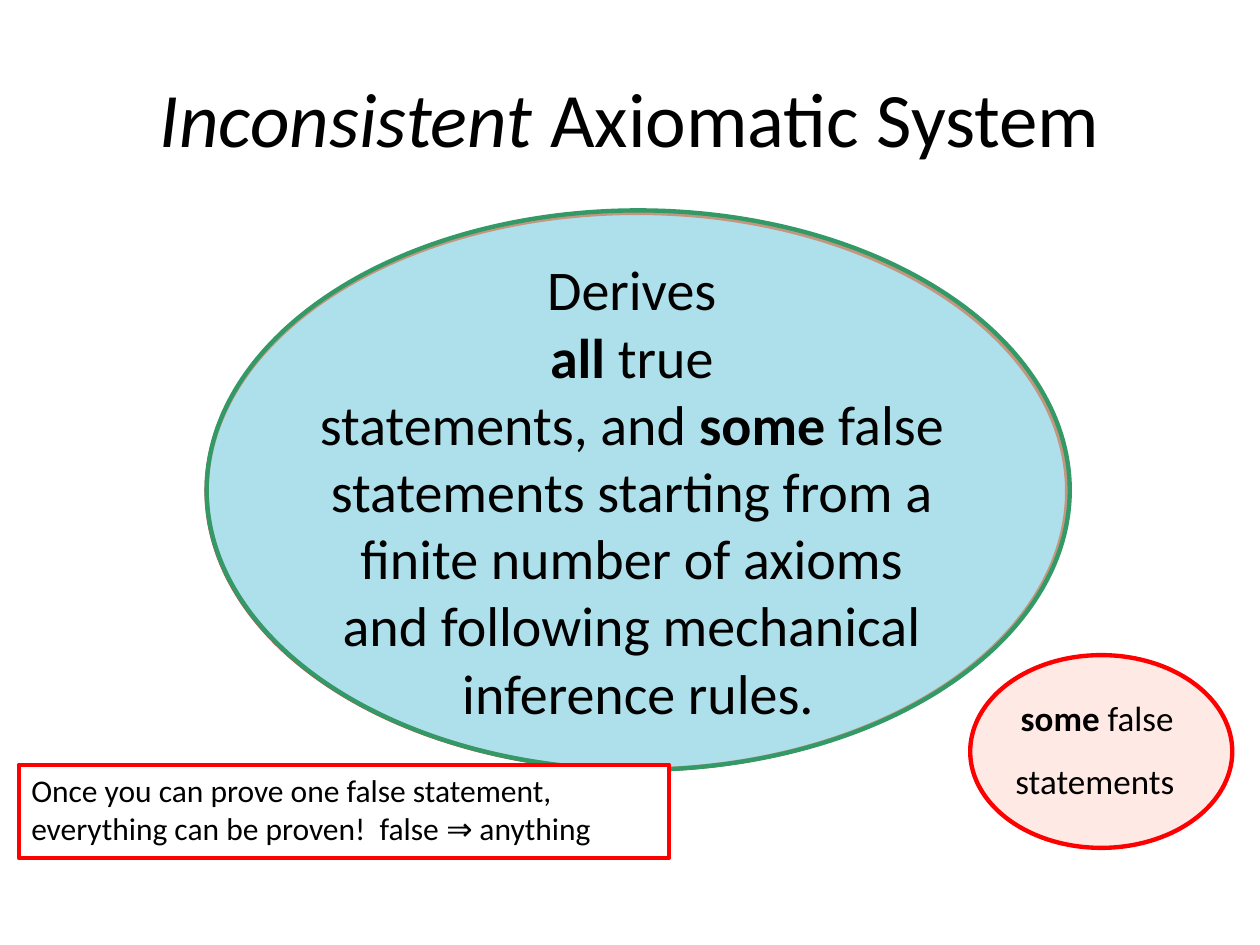
"""Build the slide on inconsistent axiomatic systems."""
from dataclasses import dataclass
from typing import Optional

import lxml.etree
import pptx
import pptx.dml.color
import pptx.enum.shapes
import pptx.enum.text
import pptx.oxml.ns
import pptx.util

W, H = 10, 7.5
FONT = "Calibri"
COLORS = {
    "text": "000000", "white": "FFFFFF", "blue": "99CCFF", "brick": "C0504D",
    "mint": "CCFFCC", "green": "339966", "pink": "FFCABD", "red": "FF0000",
}
SHAPES = pptx.enum.shapes.MSO_SHAPE
ALIGN = pptx.enum.text.PP_ALIGN
ANCHOR = pptx.enum.text.MSO_ANCHOR


@dataclass
class Run:
    text: str
    bold: bool = False
    italic: bool = False
    size: Optional[int] = None


@dataclass
class Panel:
    box: tuple[float, float, float, float]
    fill: str
    line: str
    kind: SHAPES = SHAPES.OVAL
    alpha: Optional[int] = None
    size: int = 18
    align: ALIGN = ALIGN.CENTER
    anchor: ANCHOR = ANCHOR.MIDDLE
    lines: tuple[tuple[Run, ...], ...] = ()


def rgb(name: str) -> pptx.dml.color.RGBColor:
    return pptx.dml.color.RGBColor.from_string(COLORS[name])


def place(box: tuple[float, float, float, float]) -> list[int]:
    return [pptx.util.Inches(share * side) for share, side in zip(box, (W, H, W, H))]


def write(tf, lines, size: int, align: ALIGN, anchor: ANCHOR) -> None:
    tf.vertical_anchor = anchor
    for i, runs in enumerate(lines):
        p = tf.add_paragraph() if i else tf.paragraphs[0]
        p.alignment = align
        for run in runs:
            r = p.add_run()
            r.text = run.text
            r.font.name, r.font.size = FONT, pptx.util.Pt(run.size or size)
            r.font.bold, r.font.italic = run.bold, run.italic
            r.font.color.rgb = rgb("text")


def draw(slide, panel: Panel) -> None:
    sp = slide.shapes.add_shape(panel.kind, *place(panel.box))
    sp.shadow.inherit = False
    sp.fill.solid()
    sp.fill.fore_color.rgb = rgb(panel.fill)
    if panel.alpha is not None:
        color = sp.fill._xPr.find(".//" + pptx.oxml.ns.qn("a:srgbClr"))
        alpha = lxml.etree.SubElement(color, pptx.oxml.ns.qn("a:alpha"))
        alpha.set("val", str(panel.alpha * 1000))
    sp.line.color.rgb = rgb(panel.line)
    sp.line.width = pptx.util.Pt(2.5)
    if panel.lines:
        sp.text_frame.word_wrap = False
        write(sp.text_frame, panel.lines, panel.size, panel.align, panel.anchor)


PANELS = (
    Panel((0.164, 0.2253, 0.683, 0.5893), "blue", "brick"),
    Panel((0.164, 0.2227, 0.685, 0.592), "mint", "green", alpha=40, size=32, lines=(
        (Run("Derives "),),
        (Run("all", bold=True), Run(" true ")),
        (Run("statements, and "), Run("some", bold=True), Run(" false ")),
        (Run("statements starting from a "),),
        (Run("finite number of axioms "),),
        (Run("and following mechanical "),),
        (Run("inference rules."),),
    )),
    Panel((0.77, 0.6933, 0.208, 0.204), "pink", "red", alpha=40, size=20, lines=(
        (Run("some", bold=True), Run(" false ")),
        (Run("statements"), Run(" ", size=32)),
    )),
    Panel((0.015, 0.8093, 0.516, 0.0987), "white", "red", SHAPES.RECTANGLE,
          align=ALIGN.LEFT, anchor=ANCHOR.TOP, lines=(
              (Run("Once you can prove one false statement,"),),
              (Run("everything can be proven!  false ⇒ anything"),),
          )),
)


def main() -> None:
    prs = pptx.Presentation()
    prs.slide_width, prs.slide_height = pptx.util.Inches(W), pptx.util.Inches(H)
    slide = prs.slides.add_slide(prs.slide_layouts[5])
    title = slide.shapes.title
    title.left, title.top, title.width, title.height = place((0.05, 0.04, 0.9, 0.1667))
    heading = (Run("Inconsistent", italic=True), Run(" Axiomatic System"))
    write(title.text_frame, (heading,), 44, ALIGN.CENTER, ANCHOR.MIDDLE)
    for panel in PANELS:
        draw(slide, panel)
    prs.save("out.pptx")


if __name__ == "__main__":
    main()
